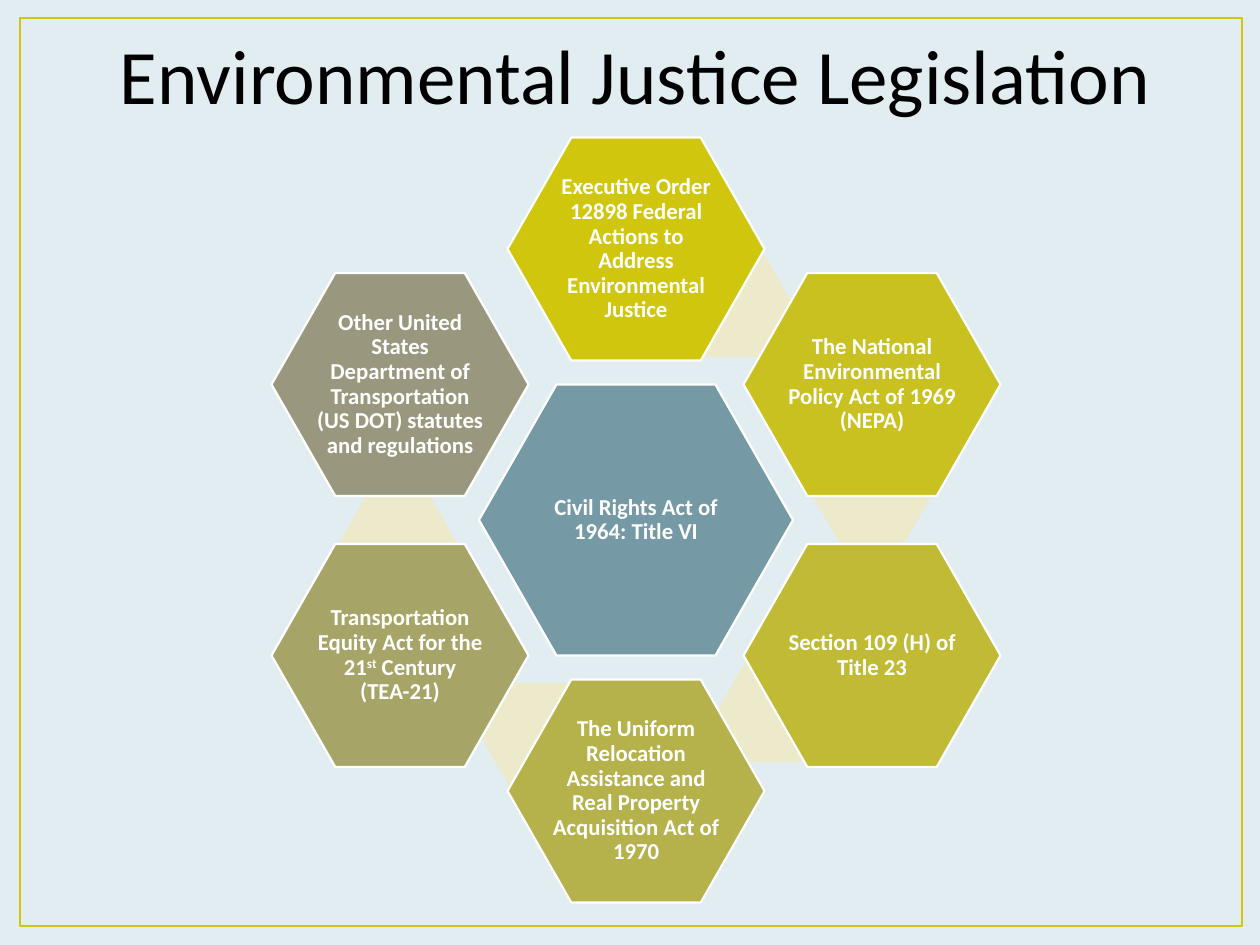
"""Build the Environmental Justice Legislation slide: six hexagons around a centre."""
from dataclasses import dataclass

from pptx import Presentation
from pptx.dml.color import RGBColor
from pptx.enum.shapes import MSO_SHAPE
from pptx.enum.text import MSO_ANCHOR, PP_ALIGN
from pptx.util import Emu, Pt

TITLE = "Environmental Justice Legislation"
CORE = ["Civil Rights Act of 1964: Title VI"]
ACTS = [
    (["Executive Order 12898 Federal Actions to Address Environmental Justice"], "CFC60D"),
    (["The National Environmental Policy Act of 1969 (NEPA)"], "C8C120"),
    (["Section 109 (H) of Title 23"], "C0BA34"),
    (["The Uniform Relocation Assistance and Real Property Acquisition Act of 1970"], "B5B14B"),
    (["Transportation Equity Act for the 21", "st", " Century (TEA-21)"], "A6A466"),
    (["Other United States Department of Transportation (US DOT) statutes and regulations"], "99987F"),
]


@dataclass(frozen=True)
class Theme:
    font: str = "Calibri"
    background: str = "E2EDF2"
    frame: str = "CFC60D"
    core: str = "759AA5"
    link: str = "EDEACC"
    white: str = "FFFFFF"
    black: str = "000000"
    title_size: int = 44
    label_size: int = 13
    frame_width: float = 1.5
    edge_width: float = 1.25


THEME = Theme()
PX_PER_INCH = 126
CENTRE = (636, 520)
CORE_SIZE, ACT_SIZE, LINK_SIZE = (314, 271), (257, 223), (118, 102)
DX, DY = 236, 271
ACT_OFFSETS = [(0, -DY), (DX, -DY / 2), (DX, DY / 2), (0, DY), (-DX, DY / 2), (-DX, -DY / 2)]
LINK_OFFSETS = [(99, -214), (236, -23), (140, 191), (-98, 214), (-238, 23)]


def px(n):
    return Emu(round(n * 914400 / PX_PER_INCH))


def rgb(value):
    return RGBColor.from_string(value)


def add_run(p, text, size, color, bold=False):
    r = p.add_run()
    r.text = text
    r.font.name, r.font.size, r.font.bold = THEME.font, Pt(size), bold
    r.font.color.rgb = rgb(color)
    return r


def add_hexagon(slide, offset, size, fill, adj=0.286):
    left, top = (c + o - s / 2 for c, o, s in zip(CENTRE, offset, size))
    sp = slide.shapes.add_shape(MSO_SHAPE.HEXAGON, px(left), px(top), *map(px, size))
    sp.adjustments[0], sp.adjustments[1] = adj, 1.155
    sp.shadow.inherit = False
    sp.fill.solid()
    sp.fill.fore_color.rgb = rgb(fill)
    sp.line.fill.background()
    return sp


def add_label(sp, parts):
    sp.line.color.rgb = rgb(THEME.white)
    sp.line.width = Pt(THEME.edge_width)
    tf = sp.text_frame
    tf.word_wrap = True
    tf.vertical_anchor = MSO_ANCHOR.MIDDLE
    tf.margin_left = tf.margin_right = tf.margin_top = tf.margin_bottom = px(2)
    p = tf.paragraphs[0]
    p.alignment, p.line_spacing = PP_ALIGN.CENTER, 0.9
    for text in parts:
        r = add_run(p, text, THEME.label_size, THEME.white, bold=True)
        if text == "st":
            r.font._element.set("baseline", "30000")


def add_frame(slide):
    sp = slide.shapes.add_shape(MSO_SHAPE.RECTANGLE, px(20), px(18), px(1222), px(908))
    sp.shadow.inherit = False
    sp.fill.background()
    sp.line.color.rgb = rgb(THEME.frame)
    sp.line.width = Pt(THEME.frame_width)


def add_title(slide):
    tf = slide.shapes.add_textbox(px(32), px(21), px(1207), px(106)).text_frame
    tf.word_wrap = True
    p = tf.paragraphs[0]
    p.alignment = PP_ALIGN.CENTER
    add_run(p, TITLE, THEME.title_size, THEME.black)


def main():
    prs = Presentation()
    prs.slide_width, prs.slide_height = px(1260), px(945)
    s = prs.slides.add_slide(prs.slide_layouts[6])
    s.background.fill.solid()
    s.background.fill.fore_color.rgb = rgb(THEME.background)
    add_frame(s)
    add_label(add_hexagon(s, (0, 0), CORE_SIZE, THEME.core), CORE)
    for offset in LINK_OFFSETS:
        add_hexagon(s, offset, LINK_SIZE, THEME.link, adj=0.289)
    for (parts, fill), offset in zip(ACTS, ACT_OFFSETS):
        add_label(add_hexagon(s, offset, ACT_SIZE, fill), parts)
    add_title(s)
    prs.save("out.pptx")


if __name__ == "__main__":
    main()
